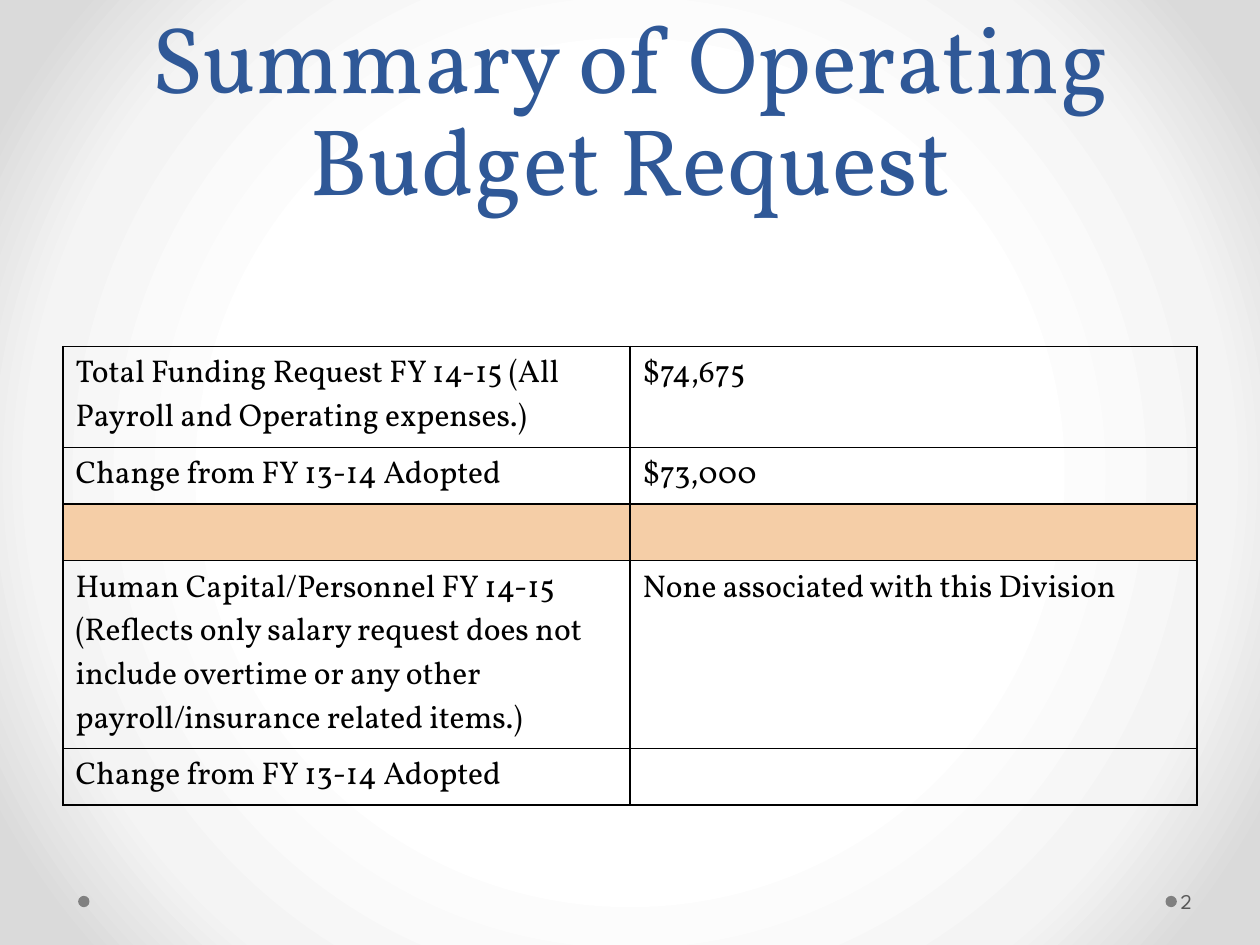
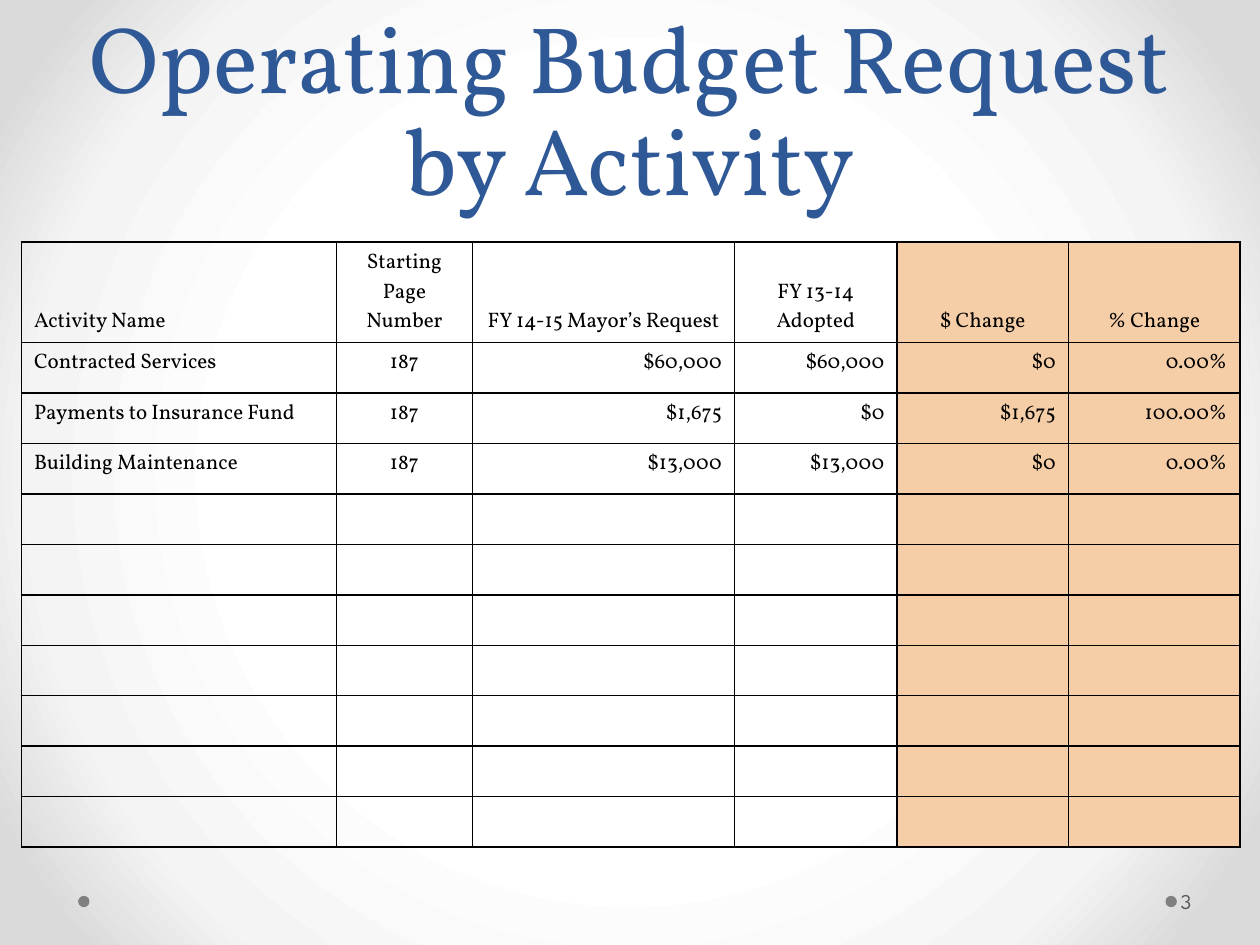
from lxml import etree
from pptx import Presentation
from pptx import util as u
from pptx.dml import color
from pptx.enum import shapes, text
from pptx.oxml import ns

PX = u.Inches(1) // 100
LEFT, CENTER, RIGHT = text.PP_ALIGN.LEFT, text.PP_ALIGN.CENTER, text.PP_ALIGN.RIGHT
TOP, MIDDLE, BOTTOM = text.MSO_ANCHOR.TOP, text.MSO_ANCHOR.MIDDLE, text.MSO_ANCHOR.BOTTOM


def rgb(value):
    return color.RGBColor.from_string(value)


def add_element(parent, tag, **attributes):
    return etree.SubElement(parent, ns.qn(tag), attributes)


class Deck:
    SERIF, SANS = "Vollkorn", "League Spartan"
    TITLE, INK, DOT, NUMBER, HIGHLIGHT = "2F5897", "000000", "808080", "595959", "F5CEA7"
    GLOW = ((50, "FFFFFF"), (76, "F4F4F4"), (92, "DADADA"))

    def __init__(self):
        self.presentation = Presentation()
        self.presentation.slide_width = 1000 * PX
        self.presentation.slide_height = 750 * PX
        self.slide = None
        self.paint_background()

    def paint_background(self):
        master = self.presentation.slide_master
        master.background.fill.gradient()
        gradient = master.element.find(".//" + ns.qn("a:gradFill"))
        for child in list(gradient):
            gradient.remove(child)
        stops = add_element(gradient, "a:gsLst")
        for position, value in self.GLOW:
            stop = add_element(stops, "a:gs", pos=str(position * 1000))
            add_element(stop, "a:srgbClr", val=value)
        circle = add_element(gradient, "a:path")
        circle.set("path", "circle")
        add_element(circle, "a:fillToRect", l="50000", t="50000", r="50000", b="50000")

    def add_slide(self, title, number):
        self.slide = self.presentation.slides.add_slide(self.presentation.slide_layouts[6])
        for left in (925, 62):
            self.dot(left, 711)
        heading = self.label(title, (50, 0, 900, 175), 54, self.SERIF, self.TITLE, CENTER, BOTTOM)
        heading.paragraphs[0].line_spacing = u.Pt(58)
        footer = self.label(number, (934, 695, 61, 40), 12, self.SANS, self.NUMBER, LEFT, MIDDLE)
        footer.margin_left = 3 * PX
        footer.margin_right = 5 * PX

    def dot(self, left, top):
        shape = self.slide.shapes.add_shape(
            shapes.MSO_SHAPE.OVAL, left * PX, top * PX, 9 * PX, 9 * PX)
        shape.shadow.inherit = False
        shape.fill.solid()
        shape.fill.fore_color.rgb = rgb(self.DOT)
        shape.line.fill.background()

    def set_text(self, paragraph, content, size, font, value, align):
        paragraph.text = content
        paragraph.alignment = align
        for run in paragraph.runs:
            run.font.size = u.Pt(size)
            run.font.name = font
            run.font.color.rgb = rgb(value)

    def label(self, content, box, size, font, value, align, anchor):
        frame = self.slide.shapes.add_textbox(*(length * PX for length in box)).text_frame
        frame.word_wrap = True
        frame.vertical_anchor = anchor
        self.set_text(frame.paragraphs[0], content, size, font, value, align)
        return frame

    def border(self, cell):
        properties = cell._tc.get_or_add_tcPr()
        for side in "LRTB":
            line = add_element(properties, "a:ln" + side, w=str(u.Pt(1)))
            fill = add_element(line, "a:solidFill")
            add_element(fill, "a:srgbClr", val=self.INK)

    def table(self, left, top, widths, heights, rows, size, style):
        table = self.slide.shapes.add_table(
            len(heights), len(widths), left * PX, top * PX,
            sum(widths) * PX, sum(heights) * PX).table
        table.first_row = False
        table.horz_banding = False
        for column, width in zip(table.columns, widths):
            column.width = width * PX
        for row, height in zip(table.rows, heights):
            row.height = height * PX
        for row_index, row in enumerate(table.rows):
            for column_index, cell in enumerate(row.cells):
                align, anchor, highlighted = style(row_index, column_index)
                self.border(cell)
                if highlighted:
                    cell.fill.solid()
                    cell.fill.fore_color.rgb = rgb(self.HIGHLIGHT)
                else:
                    cell.fill.background()
                cell.vertical_anchor = anchor
                if row_index < len(rows) and rows[row_index][column_index]:
                    self.set_text(cell.text_frame.paragraphs[0], rows[row_index][column_index],
                                  size, self.SERIF, self.INK, align)


def summary_style(row, column):
    return LEFT, TOP, row == 2


def activity_style(row, column):
    if column == 0:
        align = LEFT
    elif row == 0 or column == 1:
        align = CENTER
    else:
        align = RIGHT
    return align, BOTTOM if row == 0 else TOP, column >= 4


SUMMARY = (
    ("Total Funding Request FY 14-15 (All Payroll and Operating expenses.)", "$74,675"),
    ("Change from FY 13-14 Adopted", "$73,000"),
    ("", ""),
    ("Human Capital/Personnel FY 14-15 (Reflects only salary request does not include "
     "overtime or any other payroll/insurance related items.)",
     "None associated with this Division"),
    ("Change from FY 13-14 Adopted", ""),
)
ACTIVITIES = (
    ("Activity Name", "Starting Page Number", "FY 14-15 Mayor’s Request",
     "FY 13-14 Adopted", "$ Change", "% Change"),
    ("Contracted Services", "187", "$60,000", "$60,000", "$0", "0.00%"),
    ("Payments to Insurance Fund", "187", "$1,675", "$0", "$1,675", "100.00%"),
    ("Building Maintenance", "187", "$13,000", "$13,000", "$0", "0.00%"),
)


def main():
    deck = Deck()
    deck.add_slide("Summary of Operating Budget Request", "2")
    deck.table(50, 275, [450] * 2, [80, 45, 45, 149, 45], SUMMARY, 18, summary_style)
    deck.add_slide("Operating Budget Request by Activity", "3")
    deck.table(17, 192, [250, 108, 208, 129, 136, 136], [80] + [40] * 10,
               ACTIVITIES, 12, activity_style)
    deck.presentation.save("out.pptx")


if __name__ == "__main__":
    main()
